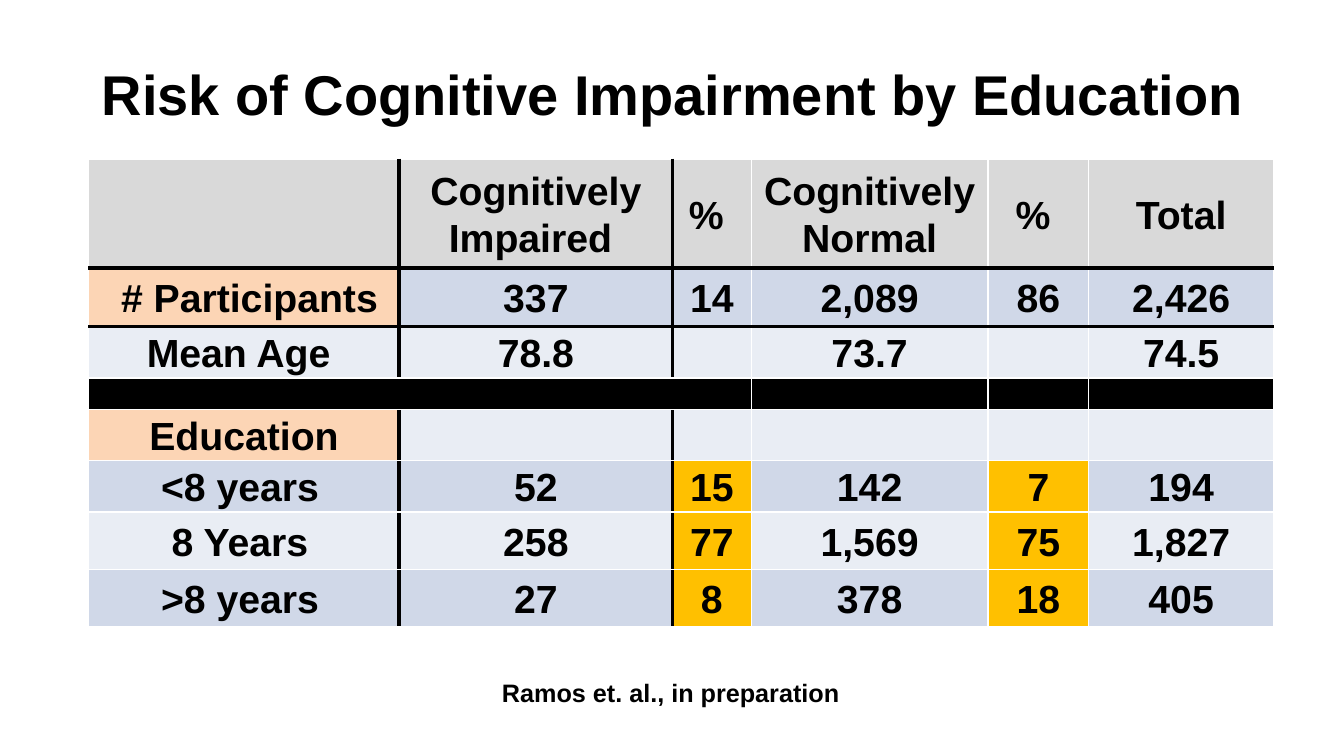
from lxml import etree
from pptx import Presentation
from pptx.dml.color import RGBColor
from pptx.enum.text import MSO_ANCHOR, PP_ALIGN
from pptx.oxml.ns import qn
from pptx.util import Pt

PX = 9144  # EMU per px, 100 px to the inch
LEFT, CENTER = PP_ALIGN.LEFT, PP_ALIGN.CENTER
MIDDLE = MSO_ANCHOR.MIDDLE

BLACK = RGBColor(0x00, 0x00, 0x00)
WHITE = RGBColor(0xFF, 0xFF, 0xFF)
GRAY = RGBColor(0xD9, 0xD9, 0xD9)
PEACH = RGBColor(0xFC, 0xD5, 0xB5)
DARK = RGBColor(0xD0, 0xD8, 0xE8)
LIGHT = RGBColor(0xE9, 0xED, 0xF4)
GOLD = RGBColor(0xFF, 0xC0, 0x00)

TITLE = "Risk of Cognitive Impairment by Education"
SOURCE = "Ramos et. al., in preparation"
# Each row: height, fill, cell texts
ROWS = [
    (108, GRAY, ["", "Cognitively Impaired ", "% ", "Cognitively Normal", "% ", "Total"]),
    (58, DARK, [" # Participants", "337", "14", "2,089", "86", "2,426"]),
    (47, LIGHT, ["Mean Age ", "78.8", "", "73.7", "", "74.5"]),
    (30, BLACK, [""] * 6),
    (47, LIGHT, ["Education"] + [""] * 5),
    (47, DARK, ["<8 years", "52", "15", "142", "7", "194"]),
    (57, LIGHT, ["8 Years", "258", "77", "1,569", "75", "1,827"]),
    (57, DARK, [">8 years", "27", "8", "378", "18", "405"]),
]
WIDTHS = [308, 271, 78, 235, 100, 183]
HEADS = {(1, 0), (4, 0)}
SHARES = {(row, col) for row in (5, 6, 7) for col in (2, 4)}
RULED_COLS = {1, 2}  # heavy line on the left of these columns
RULED_ROWS = {1, 2}  # heavy line on top of these rows


def write(frame, text, size, align=CENTER, space=None):
    para = frame.paragraphs[0]
    para.alignment = align
    para.line_spacing = space
    run = para.add_run()
    run.text = text
    run.font.size = Pt(size)
    run.font.name = "Arial"
    run.font.bold = True
    run.font.color.rgb = BLACK


def add_label(slide, box, text, size, wrap=True, **form):
    label = slide.shapes.add_textbox(*(n * PX for n in box))
    frame = label.text_frame
    frame.word_wrap = wrap
    frame.vertical_anchor = MIDDLE
    write(frame, text, size, **form)


def set_edges(cell, row, col):
    """Draw the four borders, heavy where a ruled row or column starts."""
    heavy = {
        "L": col in RULED_COLS,
        "R": col + 1 in RULED_COLS,
        "T": row in RULED_ROWS,
        "B": row + 1 in RULED_ROWS,
    }
    props = cell._tc.get_or_add_tcPr()
    for spot, (side, bold) in enumerate(heavy.items()):
        line = etree.Element(qn("a:ln" + side), w=str(Pt(3 if bold else 1)))
        fill = etree.SubElement(line, qn("a:solidFill"))
        tint = BLACK if bold else WHITE
        etree.SubElement(fill, qn("a:srgbClr"), val=str(tint))
        props.insert(spot, line)


def fill_cell(cell, row, col, text, color):
    if (row, col) in HEADS:
        color = PEACH
    elif (row, col) in SHARES:
        color = GOLD
    cell.fill.solid()
    cell.fill.fore_color.rgb = color
    cell.vertical_anchor = MIDDLE
    cell.margin_left = cell.margin_top = PX
    cell.margin_right = 9 * PX if col == 0 and row > 4 else PX
    cell.margin_bottom = 0
    if text:
        write(cell.text_frame, text, 28, space=1.07)
    set_edges(cell, row, col)


def add_grid(slide):
    high = sum(row[0] for row in ROWS)
    size = (88 * PX, 158 * PX, sum(WIDTHS) * PX, high * PX)
    table = slide.shapes.add_table(len(ROWS), len(WIDTHS), *size).table
    table.first_row = table.horz_banding = False
    for column, width in zip(table.columns, WIDTHS):
        column.width = width * PX
    for row, (height, color, texts) in enumerate(ROWS):
        table.rows[row].height = height * PX
        for col, text in enumerate(texts):
            fill_cell(table.cell(row, col), row, col, text, color)


def main():
    deck = Presentation()
    deck.slide_width, deck.slide_height = 1333 * PX, 750 * PX
    slide = deck.slides.add_slide(deck.slide_layouts[6])
    add_label(slide, (67, 30, 1200, 125), TITLE, 40)
    add_grid(slide)
    add_label(slide, (488, 667, 358, 40), SOURCE, 18, wrap=False, align=LEFT)
    deck.save("out.pptx")


if __name__ == "__main__":
    main()
